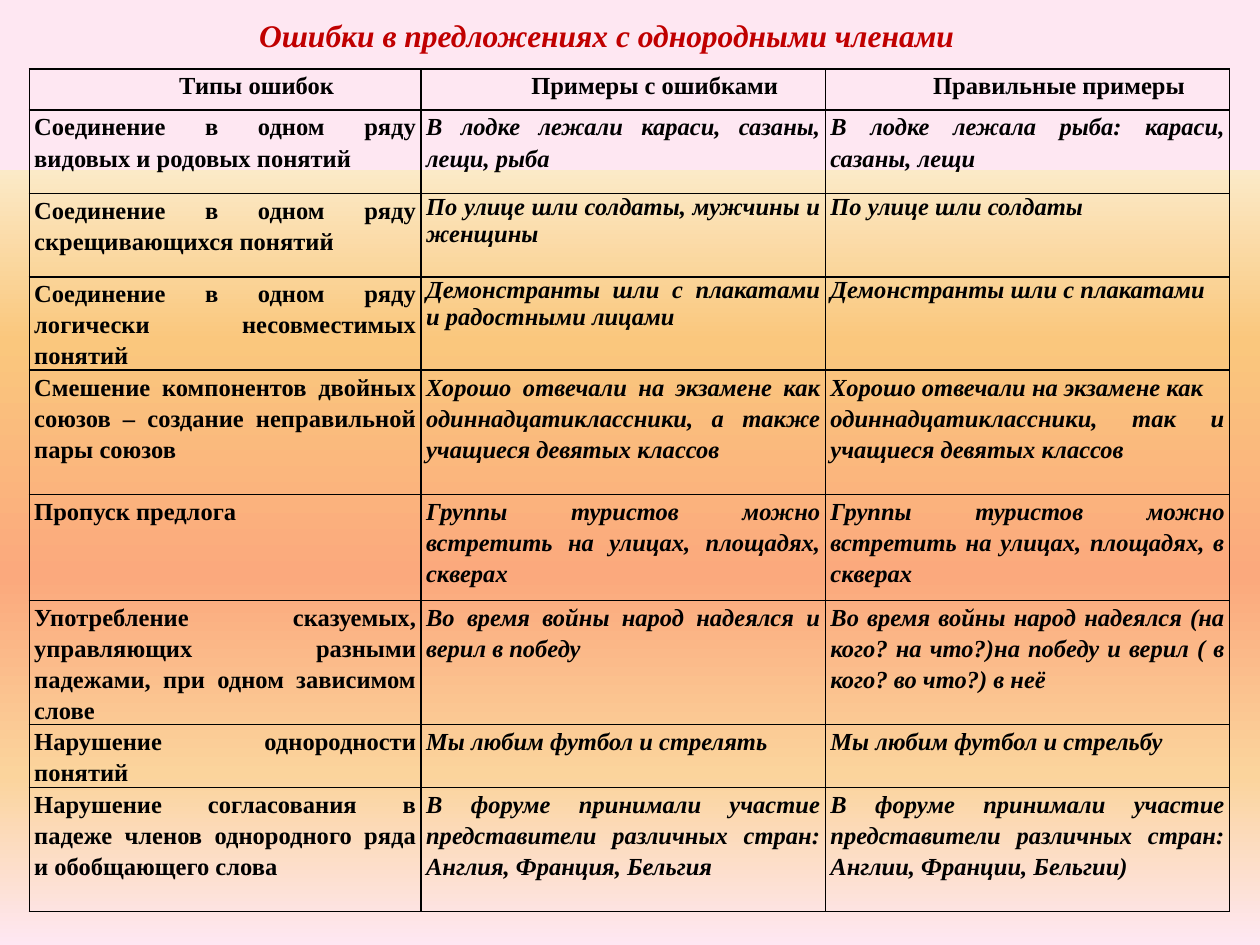
from lxml.etree import SubElement
from pptx import Presentation
from pptx.dml.color import RGBColor
from pptx.enum.text import MSO_ANCHOR as Anchor, MSO_AUTO_SIZE as AutoSize, PP_ALIGN as Align
from pptx.oxml.ns import qn
from pptx.util import Cm, Pt

FONT = "Times New Roman"
COLORS = {"title": "C00000", "text": "000000", "border": "000000",
          "pink": "FEE7F2", "cream": "FBEAC7", "amber": "FAC77D",
          "coral": "FBA97D", "sand": "FBD49C"}
BACKGROUND_STOPS = [(0, "pink"), (18, "pink"), (18, "cream"), (36, "amber"),
                    (61, "coral"), (82, "sand"), (100, "pink")]

COLUMN_WIDTHS = [7.9, 8.15, 8.15]
HEADERS = ["Типы ошибок", "Примеры с ошибками", "Правильные примеры"]
HEADER_HEIGHT = 0.83
# Row height, line spacing of the examples, then the three texts
ERRORS = [
    (1.68, 1.15, "Соединение в одном ряду видовых и родовых понятий",
     "В лодке лежали караси, сазаны, лещи, рыба",
     "В лодке лежала рыба: караси, сазаны, лещи"),
    (1.68, 1, "Соединение в одном ряду скрещивающихся понятий",
     "По улице шли солдаты, мужчины и женщины",
     "По улице шли солдаты"),
    (1.5, 1, "Соединение в одном ряду логически несовместимых понятий",
     "Демонстранты шли с плакатами и радостными лицами",
     "Демонстранты шли с плакатами "),
    (2.51, 1.15, "Смешение компонентов двойных союзов – создание неправильной пары союзов",
     "Хорошо отвечали на экзамене как одиннадцатиклассники, а также учащиеся девятых классов",
     "Хорошо отвечали на экзамене как\nодиннадцатиклассники, так и учащиеся девятых классов"),
    (2.13, 1.15, "Пропуск предлога ",
     "Группы туристов можно встретить на улицах, площадях, скверах",
     "Группы туристов можно встретить на улицах, площадях, в скверах"),
    (2.13, 1.15, "Употребление сказуемых, управляющих разными падежами, при одном зависимом слове",
     "Во время войны народ надеялся и верил в победу",
     "Во время войны народ надеялся (на кого? на что?)на победу и верил ( в кого? во что?) в неё"),
    (1.26, 1.15, "Нарушение однородности понятий ",
     "Мы любим футбол и стрелять",
     "Мы любим футбол и стрельбу"),
    (2.51, 1.15, "Нарушение согласования в падеже членов однородного ряда и обобщающего слова",
     "В форуме принимали участие представители различных стран: Англия, Франция, Бельгия",
     "В форуме принимали участие представители различных стран: Англии, Франции, Бельгии)"),
]


def write_text(frame, text, size=14, color="text", italic=False,
               align=Align.JUSTIFY, spacing=1.15, indent=0):
    frame.text = text
    for paragraph in frame.paragraphs:
        paragraph.alignment = align
        paragraph.line_spacing = spacing
        if indent:
            properties = paragraph._p.get_or_add_pPr()
            properties.set("marL", str(Cm(indent)))
            properties.set("indent", "0")
        for run in paragraph.runs:
            font = run.font
            font.name, font.size = FONT, Pt(size)
            font.bold, font.italic = True, italic
            font.color.rgb = RGBColor.from_string(COLORS[color])


def paint_background(slide):
    fill = slide.background.fill
    fill.gradient()
    fill.gradient_angle = 270  # counter-clockwise: runs from top to bottom
    stops = next(slide.element.iter(qn("a:gsLst")))
    for stop in list(stops):
        stops.remove(stop)
    for percent, name in BACKGROUND_STOPS:
        stop = SubElement(stops, qn("a:gs"), pos=str(percent * 1000))
        SubElement(stop, qn("a:srgbClr"), val=COLORS[name])


def add_title(slide, text):
    title = slide.shapes.title
    title.left, title.top, title.width, title.height = Cm(0.8), Cm(0), Cm(22.86), Cm(1.4)
    frame = title.text_frame
    frame.word_wrap = True
    frame.auto_size = AutoSize.NONE
    frame.vertical_anchor = Anchor.MIDDLE
    write_text(frame, text, size=18, color="title", italic=True,
               align=Align.CENTER, spacing=1)


def format_cell(cell):
    cell.margin_left = cell.margin_right = Cm(0.1)
    cell.margin_top = cell.margin_bottom = Cm(0)
    cell.vertical_anchor = Anchor.TOP
    properties = cell._tc.get_or_add_tcPr()
    for side in ("lnL", "lnR", "lnT", "lnB"):
        line = SubElement(properties, qn(f"a:{side}"), w=str(Pt(1)))
        fill = SubElement(line, qn("a:solidFill"))
        SubElement(fill, qn("a:srgbClr"), val=COLORS["border"])
    cell.fill.background()


def add_error_table(slide):
    heights = [HEADER_HEIGHT] + [error[0] for error in ERRORS]
    table = slide.shapes.add_table(len(heights), len(HEADERS), Cm(0.59), Cm(1.39),
                                   Cm(sum(COLUMN_WIDTHS)), Cm(sum(heights))).table
    table.horz_banding = False
    for column, width in zip(table.columns, COLUMN_WIDTHS):
        column.width = Cm(width)
    for row, height in zip(table.rows, heights):
        row.height = Cm(height)
    for cell in table.iter_cells():
        format_cell(cell)

    # Header row
    for cell, header in zip(table.rows[0].cells, HEADERS):
        write_text(cell.text_frame, header, align=Align.CENTER, indent=1.27)

    # Error type, then the wrong and the right example
    for number, (_, spacing, kind, *examples) in enumerate(ERRORS, start=1):
        write_text(table.cell(number, 0).text_frame, kind)
        for column, example in enumerate(examples, start=1):
            write_text(table.cell(number, column).text_frame, example,
                       italic=True, spacing=spacing)


def main():
    deck = Presentation()
    deck.slide_width, deck.slide_height = Cm(25.4), Cm(19.05)
    slide = deck.slides.add_slide(deck.slide_layouts[5])
    paint_background(slide)
    add_title(slide, "Ошибки в предложениях с однородными членами")
    add_error_table(slide)
    deck.save("out.pptx")


if __name__ == "__main__":
    main()
